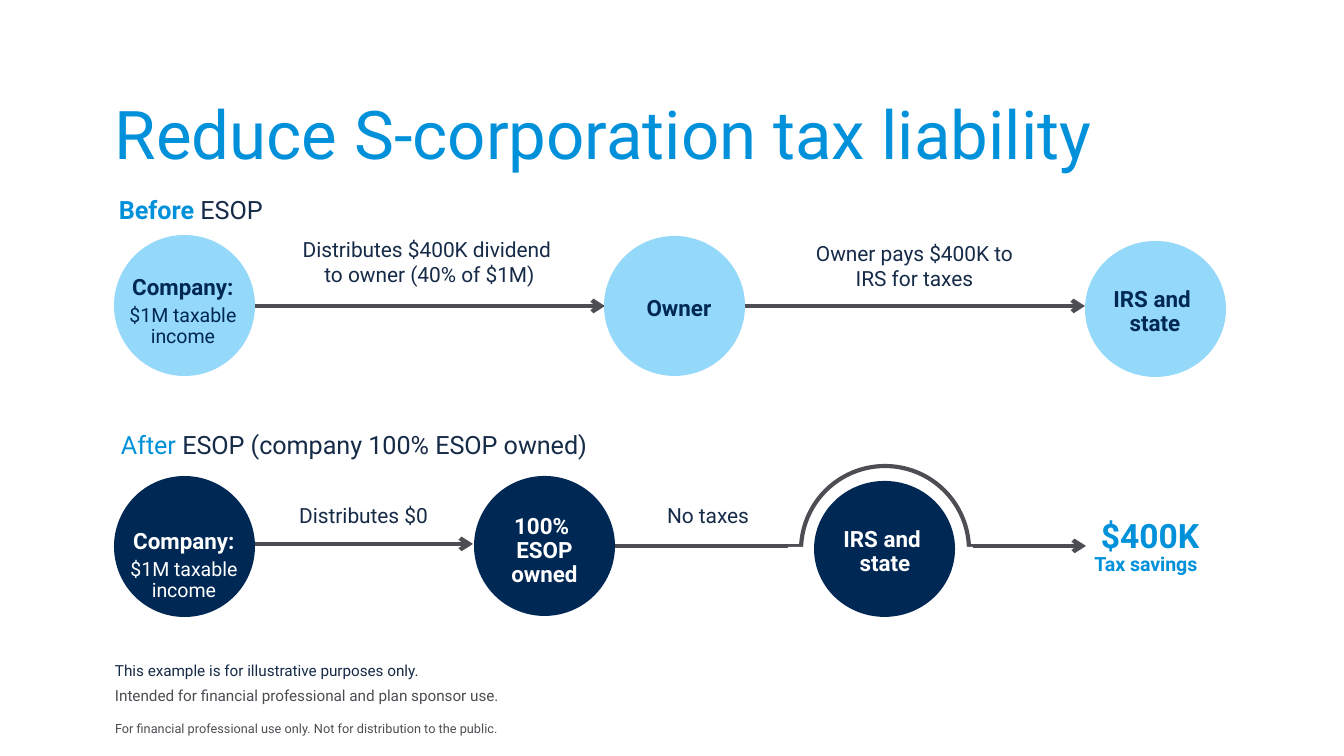
from copy import deepcopy
from dataclasses import dataclass

from lxml.etree import SubElement
from pptx import Presentation
from pptx.dml.color import RGBColor
from pptx.enum.shapes import MSO_CONNECTOR, MSO_SHAPE
from pptx.enum.text import MSO_ANCHOR, PP_ALIGN
from pptx.oxml.ns import qn
from pptx.slide import Slide
from pptx.util import Emu, Pt

SLIDE_WIDTH, SLIDE_HEIGHT = 1344, 756
EMU_PER_PX = 9144000 / SLIDE_WIDTH


@dataclass(frozen=True)
class Theme:
    font: str = "Roboto"
    white: str = "FFFFFF"
    accent: str = "0091DA"
    navy: str = "002855"
    sky: str = "94D8FA"
    ink: str = "162B48"
    gray: str = "4D4E53"
    title: float = 36
    saving: float = 18
    heading: float = 13.5
    node: float = 12
    label: float = 11.2
    detail: float = 10.5
    note: float = 8.2
    legal: float = 6.8
    line: float = 2.25


THEME = Theme()


@dataclass(frozen=True)
class Area:
    left: int
    top: int
    width: int
    height: int


@dataclass(frozen=True)
class Span:
    text: str
    size: float
    color: str
    bold: bool = False


@dataclass(frozen=True)
class Para:
    spans: tuple[Span, ...]
    spacing: float | Pt = 1.0
    before: float = 0
    after: float = 0


@dataclass(frozen=True)
class TextBox:
    area: Area
    paras: tuple[Para, ...]
    align: PP_ALIGN = PP_ALIGN.CENTER
    anchor: MSO_ANCHOR = MSO_ANCHOR.TOP
    inset: tuple[int, int] = (13, 7)


@dataclass(frozen=True)
class Flow:
    start: int
    end: int
    level: int
    arrow: bool = True


@dataclass(frozen=True)
class Figure:
    area: Area
    fill: str
    kind: MSO_SHAPE = MSO_SHAPE.OVAL
    outline: str | None = None


def px(length: int) -> Emu:
    return Emu(round(length * EMU_PER_PX))


def corners(area: Area) -> tuple[Emu, ...]:
    return px(area.left), px(area.top), px(area.width), px(area.height)


def style(run, span: Span) -> None:
    run.font.name = THEME.font
    run.font.size = Pt(span.size)
    run.font.bold = span.bold
    run.font.color.rgb = RGBColor.from_string(span.color)


def fill_paragraph(paragraph, para: Para, align: PP_ALIGN) -> None:
    paragraph.alignment = align
    paragraph.line_spacing = para.spacing
    paragraph.space_before = Pt(para.before)
    paragraph.space_after = Pt(para.after)
    lead, *others = para.spans
    paragraph.text = lead.text
    for run in paragraph.runs:
        style(run, lead)
    for span in others:
        run = paragraph.add_run()
        run.text = span.text
        style(run, span)
    properties = paragraph.runs[0].font._element
    for line_break in paragraph._p.findall(qn("a:br")):
        line_break.append(deepcopy(properties))


def draw_text(page: Slide, item: TextBox) -> None:
    box = page.shapes.add_textbox(*corners(item.area))
    frame = box.text_frame
    frame.word_wrap = True
    frame.vertical_anchor = item.anchor
    frame.margin_left = frame.margin_right = px(item.inset[0])
    frame.margin_top = frame.margin_bottom = px(item.inset[1])
    for index, para in enumerate(item.paras):
        paragraph = frame.add_paragraph() if index else frame.paragraphs[0]
        fill_paragraph(paragraph, para, item.align)


def draw_flow(page: Slide, flow: Flow) -> None:
    connector = page.shapes.add_connector(
        MSO_CONNECTOR.STRAIGHT, px(flow.start), px(flow.level), px(flow.end), px(flow.level))
    connector.line.width = Pt(THEME.line)
    connector.line.color.rgb = RGBColor.from_string(THEME.gray)
    if flow.arrow:
        SubElement(connector.line._get_or_add_ln(), qn("a:tailEnd"), type="arrow")
    SubElement(connector._element.spPr, qn("a:effectLst"))


def draw_figure(page: Slide, figure: Figure) -> None:
    shape = page.shapes.add_shape(figure.kind, *corners(figure.area))
    shape.shadow.inherit = False
    shape.fill.solid()
    shape.fill.fore_color.rgb = RGBColor.from_string(figure.fill)
    if figure.outline:
        shape.line.width = Pt(THEME.line)
        shape.line.color.rgb = RGBColor.from_string(figure.outline)
    else:
        shape.line.fill.background()


def plain(text: str, size: float, color: str, bold: bool = False,
          spacing: float | Pt = 1.0, before: float = 0) -> tuple[Para, ...]:
    return (Para((Span(text, size, color, bold),), spacing, before),)


def node(area: Area, text: str, color: str, anchor: MSO_ANCHOR = MSO_ANCHOR.TOP) -> TextBox:
    return TextBox(area, plain(text, THEME.node, color, True, 0.9), anchor=anchor)


def company(left: int, top: int, color: str) -> TextBox:
    name = Para((Span("Company:", THEME.node, color, True),), 0.9, after=3)
    income = plain("$1M taxable income", THEME.detail, color, spacing=0.9)
    return TextBox(Area(left, top, 134, 108), (name, *income), anchor=MSO_ANCHOR.MIDDLE)


def label(area: Area, text: str, spacing: float = 1.0) -> TextBox:
    return TextBox(area, plain(text, THEME.label, THEME.ink, spacing=spacing))


def heading(area: Area, lead: str, rest: str, bold: bool) -> TextBox:
    spans = (Span(lead, THEME.heading, THEME.accent, bold), Span(rest, THEME.heading, THEME.ink))
    return TextBox(area, (Para(spans),), PP_ALIGN.LEFT)


FLOWS = (Flow(599, 801, 546, False), Flow(130, 473, 544), Flow(242, 605, 306),
         Flow(722, 1085, 306), Flow(969, 1086, 546))
FIGURES = (
    Figure(Area(474, 476, 141, 140), THEME.navy),
    Figure(Area(114, 476, 141, 141), THEME.navy),
    Figure(Area(604, 236, 141, 140), THEME.sky),
    Figure(Area(114, 235, 141, 141), THEME.sky),
    Figure(Area(1085, 241, 141, 136), THEME.sky),
    Figure(Area(801, 466, 168, 168), THEME.white, outline=THEME.gray),
    Figure(Area(788, 547, 185, 98), THEME.white, MSO_SHAPE.RECTANGLE),
    Figure(Area(814, 481, 141, 136), THEME.navy),
)
TEXTS = (
    TextBox(Area(106, 87, 1152, 89),
            plain("Reduce S-corporation tax liability", THEME.title, THEME.accent),
            PP_ALIGN.LEFT, inset=(9, 5)),
    heading(Area(106, 187, 202, 50), "Before ", "ESOP", True),
    company(116, 258, THEME.navy),
    label(Area(257, 230, 345, 65), "Distributes $400K dividend \vto owner (40% of $1M)"),
    node(Area(612, 290, 134, 38), "Owner", THEME.navy),
    label(Area(802, 234, 225, 65), "Owner pays $400K to IRS for taxes"),
    node(Area(1086, 281, 138, 63), "IRS and \vstate", THEME.navy, MSO_ANCHOR.MIDDLE),
    heading(Area(108, 422, 601, 85), "After ", "ESOP (company 100% ESOP owned)", False),
    company(117, 512, THEME.white),
    label(Area(254, 499, 219, 36), "Distributes $0", 0.9),
    node(Area(493, 508, 103, 87), "100% \vESOP\vowned", THEME.white),
    label(Area(613, 501, 190, 35), "No taxes", 0.8),
    node(Area(816, 521, 138, 63), "IRS and \vstate", THEME.white, MSO_ANCHOR.MIDDLE),
    TextBox(Area(1086, 508, 128, 54), plain("$400K", THEME.saving, THEME.accent, True)),
    TextBox(Area(1078, 543, 136, 39),
            plain("Tax savings", THEME.detail, THEME.accent, True, Pt(13.5))),
    TextBox(Area(102, 652, 1008, 60),
            plain("This example is for illustrative purposes only.", THEME.note, THEME.ink)
            + plain("Intended for financial professional and plan sponsor use.",
                    THEME.note, THEME.gray, before=4),
            PP_ALIGN.LEFT, MSO_ANCHOR.BOTTOM),
    TextBox(Area(102, 714, 493, 28),
            plain("For financial professional use only. Not for distribution to the public.",
                  THEME.legal, THEME.gray), PP_ALIGN.LEFT),
)


def main() -> None:
    deck = Presentation()
    deck.slide_width, deck.slide_height = px(SLIDE_WIDTH), px(SLIDE_HEIGHT)
    page = deck.slides.add_slide(deck.slide_layouts[6])
    for flow in FLOWS:
        draw_flow(page, flow)
    for figure in FIGURES:
        draw_figure(page, figure)
    for item in TEXTS:
        draw_text(page, item)
    deck.save("out.pptx")


if __name__ == "__main__":
    main()
